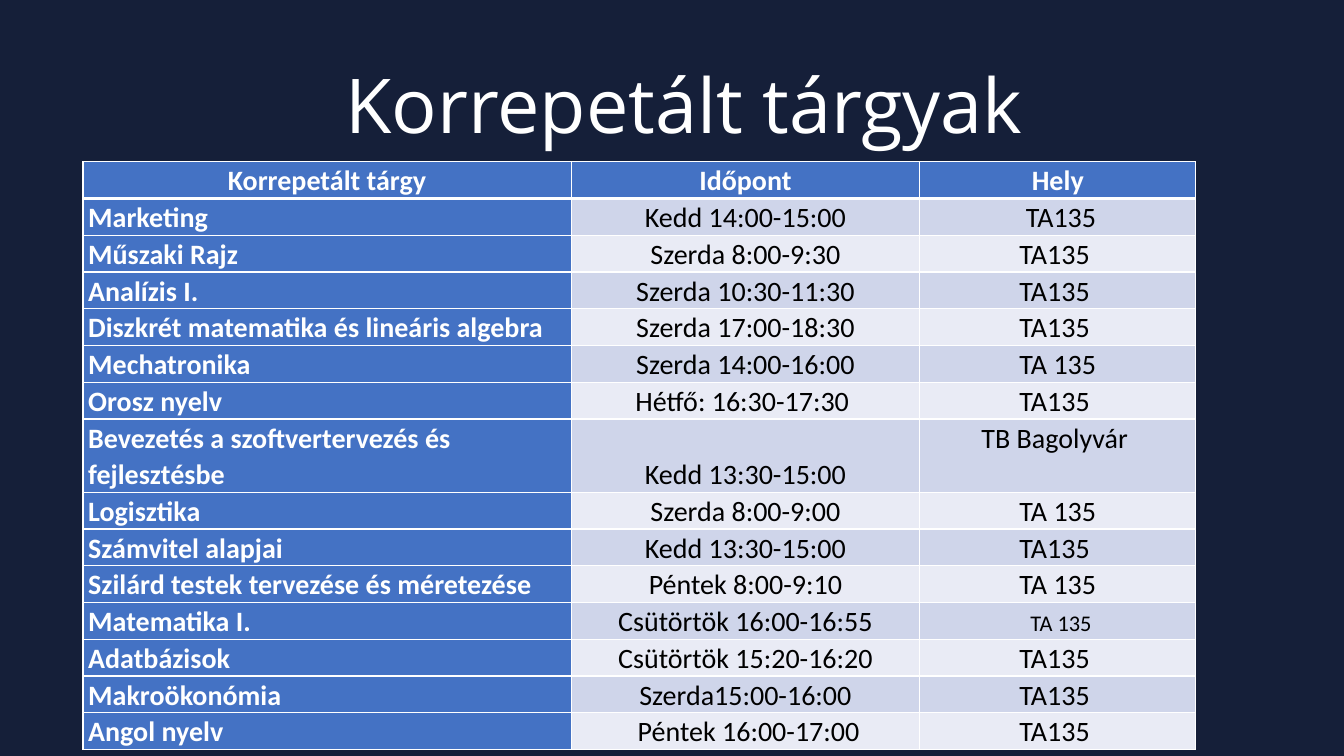
"""Build a slide with the timetable of tutored subjects."""
import pptx
import pptx.dml.color
import pptx.enum.text
import pptx.oxml
import pptx.oxml.ns
import pptx.util

PX = 9525
COLORS = {
    "night": "151F39",
    "white": "FFFFFF",
    "black": "000000",
    "blue": "4472C4",
    "band_dark": "CFD5EA",
    "band_light": "E9EBF5",
}
ALIGN = pptx.enum.text.PP_ALIGN
ANCHOR = pptx.enum.text.MSO_ANCHOR
COLUMN_WIDTHS = (465, 332, 263)
COLUMN_ANCHORS = (ANCHOR.BOTTOM, ANCHOR.BOTTOM, ANCHOR.TOP)
ROW_HEIGHT = 35
SMALL_MARK = "|"
TIMETABLE = (
    ("Korrepetált tárgy", "Időpont", "Hely"),
    ("Marketing", "Kedd 14:00-15:00", " TA135"),
    ("Műszaki Rajz", "Szerda 8:00-9:30", "TA135 "),
    ("Analízis I.", "Szerda 10:30-11:30", "TA135 "),
    ("Diszkrét matematika és lineáris algebra", "Szerda 17:00-18:30", "TA135 "),
    ("Mechatronika", "Szerda 14:00-16:00", "TA 135"),
    ("Orosz nyelv", "Hétfő: 16:30-17:30 ", "TA135 "),
    ("Bevezetés a szoftvertervezés és fejlesztésbe", "Kedd 13:30-15:00", "TB Bagolyvár "),
    ("Logisztika", "Szerda 8:00-9:00", "TA 135"),
    ("Számvitel alapjai", "Kedd 13:30-15:00", "TA135 "),
    ("Szilárd testek tervezése és méretezése", "Péntek 8:00-9:10", "TA 135"),
    ("Matematika I.", "Csütörtök 16:00-16:55", " |TA 135"),
    ("Adatbázisok", "Csütörtök 15:20-16:20", "TA135 "),
    ("Makroökonómia", "Szerda15:00-16:00", "TA135 "),
    ("Angol nyelv", " Péntek 16:00-17:00", "TA135 "),
)


def px(length):
    """Turn pixels into EMU."""
    return pptx.util.Emu(length * PX)


def rgb(name):
    """Look up a named colour."""
    return pptx.dml.color.RGBColor.from_string(COLORS[name])


def style_font(font, name, size, color, bold):
    """Set the face, size, colour and weight of a font."""
    font.name = name
    font.size = pptx.util.Pt(size)
    font.bold = bold
    font.color.rgb = rgb(color)


def add_title(page, text):
    """Place the centred title in its placeholder."""
    title = page.shapes.title
    title.left, title.top, title.width, title.height = map(px, (152, 67, 999, 74))
    frame = title.text_frame
    frame.text = text
    frame.auto_size = pptx.enum.text.MSO_AUTO_SIZE.NONE
    frame.vertical_anchor = ANCHOR.MIDDLE
    para = frame.paragraphs[0]
    para.alignment = ALIGN.CENTER
    para.line_spacing = 0.9
    style_font(para.font, "Open Sans", 54, "white", False)


def set_borders(cell, is_header):
    """Draw white cell borders, with a thick line below the header."""
    properties = cell._tc.get_or_add_tcPr()
    for index, side in enumerate(("lnL", "lnR", "lnT", "lnB")):
        points = 3 if is_header and side == "lnB" else 1
        border = pptx.oxml.parse_xml(
            f'<a:{side} {pptx.oxml.ns.nsdecls("a")} w="{pptx.util.Pt(points)}">'
            f'<a:solidFill><a:srgbClr val="{COLORS["white"]}"/></a:solidFill></a:{side}>'
        )
        properties.insert(index, border)


def fill_cell(cell, text, row, column):
    """Write and format one cell by its place in the timetable."""
    is_header = row == 0
    is_label = is_header or column == 0
    band = "band_dark" if row % 2 else "band_light"
    cell.fill.solid()
    cell.fill.fore_color.rgb = rgb("blue" if is_label else band)
    cell.margin_left = cell.margin_right = px(5)
    cell.margin_top = cell.margin_bottom = 0
    cell.vertical_anchor = ANCHOR.BOTTOM if is_header else COLUMN_ANCHORS[column]
    para = cell.text_frame.paragraphs[0]
    para.alignment = ALIGN.CENTER if is_header or column else ALIGN.LEFT
    para.line_spacing = 1.07
    para.space_after = pptx.util.Pt(8)
    style_font(para.font, "Calibri", 20, "white" if is_label else "black", is_label)
    normal, *small = text.split(SMALL_MARK)
    para.add_run().text = normal
    for part in small:
        span = para.add_run()
        span.text = part
        span.font.size = pptx.util.Pt(16)
    set_borders(cell, is_header)


def add_timetable(page):
    """Add the table of subjects, times and places."""
    frame = page.shapes.add_table(
        len(TIMETABLE), len(COLUMN_WIDTHS), px(79), px(154),
        px(sum(COLUMN_WIDTHS)), px(ROW_HEIGHT * len(TIMETABLE)),
    )
    table = frame.table
    table.first_col = True
    for column, width in zip(table.columns, COLUMN_WIDTHS):
        column.width = px(width)
    for row, texts in enumerate(TIMETABLE):
        table.rows[row].height = px(ROW_HEIGHT)
        for column, text in enumerate(texts):
            fill_cell(table.cell(row, column), text, row, column)


def main():
    """Build and save the deck."""
    deck = pptx.Presentation()
    deck.slide_width, deck.slide_height = px(1280), px(720)
    page = deck.slides.add_slide(deck.slide_layouts[5])
    page.background.fill.solid()
    page.background.fill.fore_color.rgb = rgb("night")
    add_title(page, "Korrepetált tárgyak")
    add_timetable(page)
    deck.save("out.pptx")


if __name__ == "__main__":
    main()
